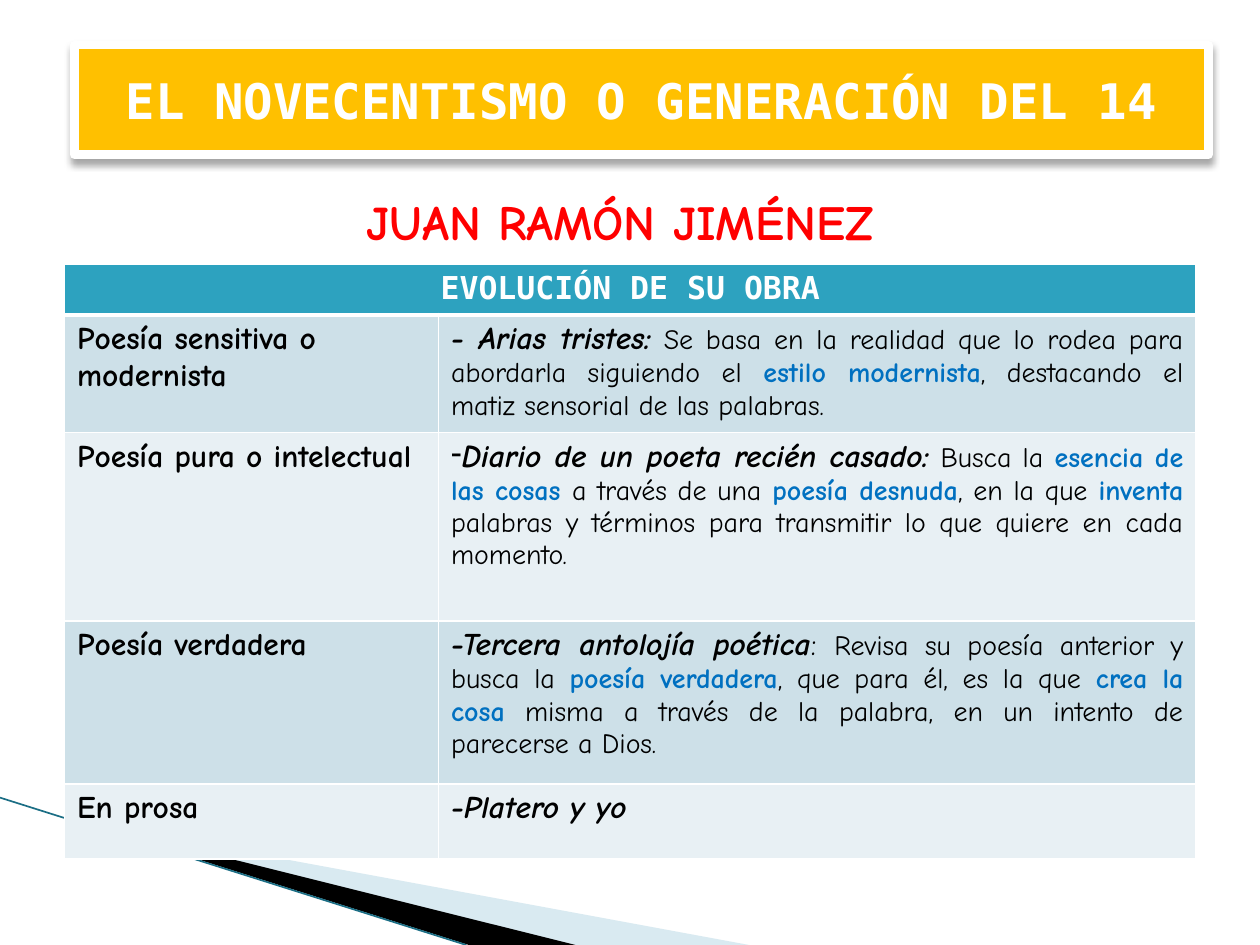
from lxml.etree import SubElement
from pptx import Presentation
from pptx.dml.color import RGBColor
from pptx.enum.shapes import MSO_CONNECTOR, MSO_SHAPE
from pptx.enum.text import MSO_ANCHOR, PP_ALIGN
from pptx.oxml.ns import qn
from pptx.util import Cm, Pt

BODY_FONT, HEADING_FONT = "Comic Neue", "DejaVu Sans Mono"
WHITE, BLACK, RED, BLUE = "FFFFFF", "000000", "FF0000", "0070C0"
TITLE_FILL, HEADER_FILL = "FFC000", "2DA2BF"
BAND_FILLS = ("CDE0E8", "E8F0F4")
COLUMN_WIDTHS = (7.54, 15.27)
ROW_HEIGHTS = (1.02, 2.36, 3.8, 3.28, 1.52)
WORK = {"bold": True, "italic": True}
PLAIN = {"size": 16}
KEY = {"size": 16, "bold": True, "color": BLUE}

STAGES = [
    ("Poesía sensitiva o modernista", False, [
        ("- Arias tristes:", WORK),
        (" Se basa en la realidad que lo rodea para abordarla siguiendo el ", PLAIN),
        ("estilo modernista", KEY),
        (", destacando el matiz sensorial de las palabras.", PLAIN)]),
    ("Poesía pura o intelectual", True, [
        ("Diario de un poeta recién casado:", WORK),
        (" Busca la ", PLAIN),
        ("esencia de las cosas ", KEY),
        ("a través de una ", PLAIN),
        ("poesía desnuda", KEY),
        (", en la que ", PLAIN),
        ("inventa", KEY),
        (" palabras y términos para transmitir lo que quiere en cada momento.", PLAIN)]),
    ("Poesía verdadera", False, [
        ("-Tercera antolojía poética", WORK),
        (": ", {}),
        ("Revisa su poesía anterior y busca la ", PLAIN),
        ("poesía verdadera", KEY),
        (", que para él, es la que ", PLAIN),
        ("crea la cosa", KEY),
        (" misma a través de la palabra, en un intento de parecerse a Dios.", PLAIN)]),
    ("En prosa", False, [("-Platero y yo", WORK)]),
]


def rgb(value):
    """Turn a hex string into a colour."""
    return RGBColor.from_string(value)


def add_text(paragraph, text, size=18, font=BODY_FONT, color=BLACK, bold=False, italic=False):
    """Append one formatted run to a paragraph."""
    run = paragraph.add_run()
    run.text = text
    run.font.size, run.font.name = Pt(size), font
    run.font.bold, run.font.italic = bold, italic
    run.font.color.rgb = rgb(color)


def add_alpha(color_element, percent):
    """Make a colour element partly transparent."""
    SubElement(color_element, qn("a:alpha"), val=str(percent * 1000))


class SlideBuilder:
    """Hold the current slide and draw its elements in one style."""

    def __init__(self, slide):
        """Keep the slide to draw on."""
        self.slide = slide

    def band(self, points, color, opacity=100):
        """Draw a filled polygon through points in centimetres."""
        corners = [(Cm(x), Cm(y)) for x, y in points]
        builder = self.slide.shapes.build_freeform(*corners[0], scale=1.0)
        builder.add_line_segments(corners[1:], close=True)
        shape = builder.convert_to_shape()
        shape.shadow.inherit = False
        shape.fill.solid()
        shape.fill.fore_color.rgb = rgb(color)
        shape.line.fill.background()
        if opacity < 100:
            add_alpha(shape.fill._xPr.find(".//" + qn("a:srgbClr")), opacity)

    def line(self, start, end, color, width):
        """Draw a straight line without shadow."""
        ends = [Cm(value) for value in (*start, *end)]
        connector = self.slide.shapes.add_connector(MSO_CONNECTOR.STRAIGHT, *ends)
        connector.line.color.rgb = rgb(color)
        connector.line.width = Pt(width)
        SubElement(connector._element.spPr, qn("a:effectLst"))

    def title(self, text, left, top, width, height):
        """Draw the framed title with its soft shadow."""
        shape = self.slide.shapes.add_shape(
            MSO_SHAPE.RECTANGLE, Cm(left), Cm(top), Cm(width), Cm(height))
        shape.fill.solid()
        shape.fill.fore_color.rgb = rgb(TITLE_FILL)
        shape.line.color.rgb = rgb(WHITE)
        shape.line.width = Pt(5)
        shape.shadow.inherit = False
        effects = shape._element.spPr.find(qn("a:effectLst"))
        shadow = SubElement(effects, qn("a:outerShdw"), blurRad=str(Pt(4)), dist=str(Pt(3)),
                            dir="5400000", rotWithShape="0")
        add_alpha(SubElement(shadow, qn("a:srgbClr"), val=BLACK), 35)
        shape.text_frame.vertical_anchor = MSO_ANCHOR.MIDDLE
        paragraph = shape.text_frame.paragraphs[0]
        paragraph.alignment = PP_ALIGN.CENTER
        add_text(paragraph, text, size=28, font=HEADING_FONT, color=WHITE, bold=True)

    def subtitle(self, text, left, top, width, height):
        """Place the centred author name."""
        box = self.slide.shapes.add_textbox(Cm(left), Cm(top), Cm(width), Cm(height))
        box.text_frame.word_wrap = True
        paragraph = box.text_frame.paragraphs[0]
        paragraph.alignment = PP_ALIGN.CENTER
        add_text(paragraph, text, size=28, color=RED, bold=True)

    def cell(self, cell, fill, runs, alignment=PP_ALIGN.LEFT, dashed=False, top=1, bottom=1):
        """Fill a table cell with white borders and formatted runs."""
        properties = cell._tc.get_or_add_tcPr()
        for side, width in (("L", 1), ("R", 1), ("T", top), ("B", bottom)):
            border = SubElement(properties, qn(f"a:ln{side}"), w=str(Pt(width)))
            SubElement(SubElement(border, qn("a:solidFill")), qn("a:srgbClr"), val=WHITE)
        cell.fill.solid()
        cell.fill.fore_color.rgb = rgb(fill)
        paragraph = cell.text_frame.paragraphs[0]
        paragraph.alignment = alignment
        if dashed:
            layout = paragraph._p.get_or_add_pPr()
            layout.set("marL", "0")
            layout.set("indent", "0")
            SubElement(layout, qn("a:buFontTx"))
            SubElement(layout, qn("a:buChar"), char="-")
        for text, style in runs:
            add_text(paragraph, text, **style)

    def table(self, heading, stages, left, top):
        """Draw the table of stages under a merged heading."""
        frame = self.slide.shapes.add_table(
            len(ROW_HEIGHTS), len(COLUMN_WIDTHS), Cm(left), Cm(top),
            Cm(sum(COLUMN_WIDTHS)), Cm(sum(ROW_HEIGHTS)))
        table = frame.table
        for column, width in zip(table.columns, COLUMN_WIDTHS):
            column.width = Cm(width)
        for row, height in zip(table.rows, ROW_HEIGHTS):
            row.height = Cm(height)
        table.cell(0, 0).merge(table.cell(0, 1))
        heading_style = {"font": HEADING_FONT, "color": WHITE, "bold": True}
        self.cell(table.cell(0, 0), HEADER_FILL, [(heading, heading_style)],
                  PP_ALIGN.CENTER, bottom=3)
        self.cell(table.cell(0, 1), HEADER_FILL, [], bottom=3)
        for index, (stage, dashed, runs) in enumerate(stages):
            fill = BAND_FILLS[index % 2]
            edge = 3 if index == 0 else 1
            self.cell(table.cell(index + 1, 0), fill, [(stage, {"bold": True})], top=edge)
            self.cell(table.cell(index + 1, 1), fill, runs, PP_ALIGN.JUSTIFY, dashed, top=edge)


def main():
    """Build and save the slide."""
    presentation = Presentation()
    presentation.slide_width, presentation.slide_height = Cm(25.4), Cm(19.05)
    builder = SlideBuilder(presentation.slides.add_slide(presentation.slide_layouts[6]))
    builder.band([(1.4, 16.52), (15.1, 19.05), (11.58, 19.05)], "A0CBDC", opacity=40)
    builder.band([(1.35, 16.49), (11.6, 19.05), (9.45, 19.05)], BLACK)
    builder.line((0, 16.08), (9.4, 19.05), "1B6E85", 0.95)
    builder.title("EL NOVECENTISMO O GENERACIÓN DEL 14", 1.5, 0.91, 22.86, 2.21)
    builder.subtitle("JUAN RAMÓN JIMÉNEZ", 3.3, 3.73, 18.39, 1.45)
    builder.table("EVOLUCIÓN DE SU OBRA", STAGES, 1.3, 5.33)
    presentation.save("out.pptx")


if __name__ == "__main__":
    main()
